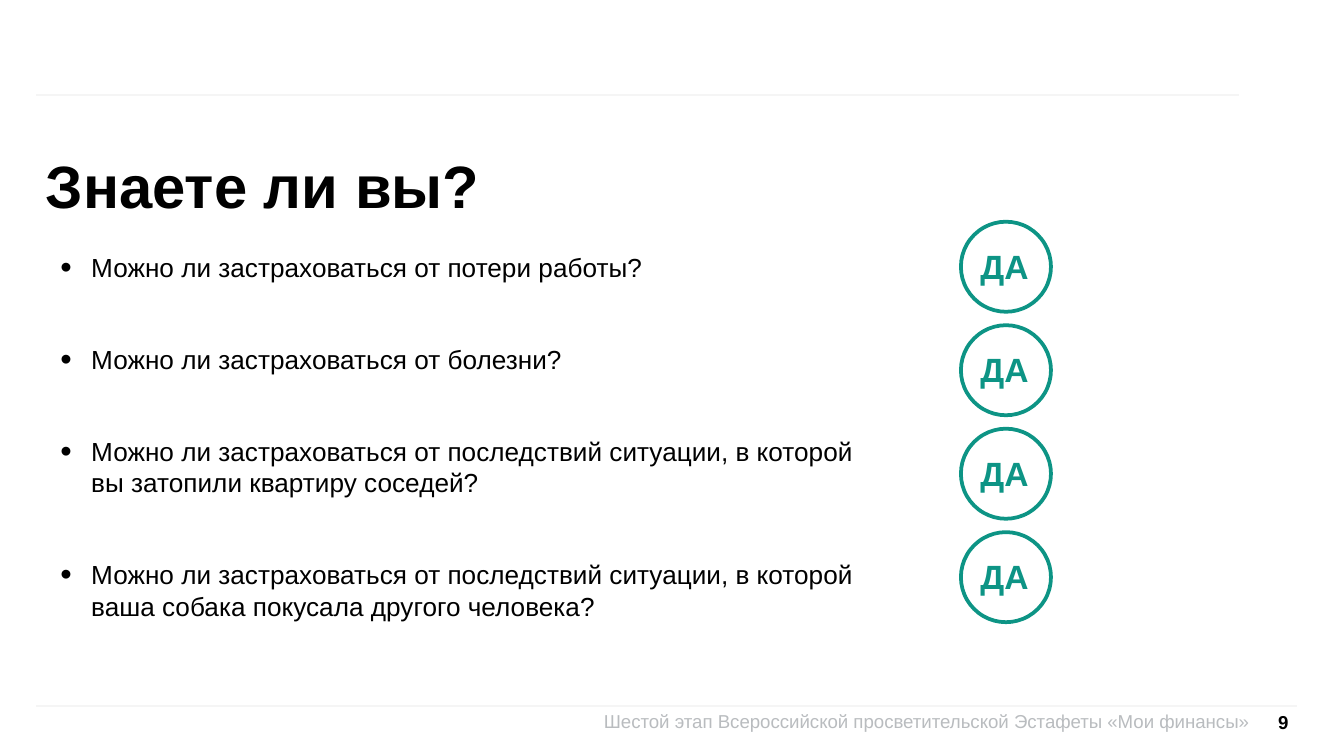
from lxml import etree
from pptx import Presentation
from pptx.dml.color import RGBColor
from pptx.enum.shapes import MSO_CONNECTOR, MSO_SHAPE
from pptx.enum.text import MSO_ANCHOR as ANCHOR, PP_ALIGN as ALIGN
from pptx.oxml.ns import qn
from pptx.util import Inches, Pt

BLACK = RGBColor(0x00, 0x00, 0x00)
GREY = RGBColor(0xB9, 0xBC, 0xBF)
PALE = RGBColor(0xF5, 0xF5, 0xF5)
TEAL = RGBColor(0x0D, 0x94, 0x85)

QUESTIONS = [
    "Можно ли застраховаться от потери работы?",
    "Можно ли застраховаться от болезни?",
    "Можно ли застраховаться от последствий ситуации, в которой вы затопили квартиру соседей?",
    "Можно ли застраховаться от последствий ситуации, в которой ваша собака покусала другого человека?",
]


def write(sp, *lines, size, color=BLACK, bold=False, align=ALIGN.LEFT,
          anchor=ANCHOR.TOP, inset=(0, 0), wrap=True, bullet=False, gap=0):
    """Fill a shape with one paragraph per line; inset is (sides, top and bottom) in inches."""
    tf = sp.text_frame
    tf.word_wrap = wrap
    tf.vertical_anchor = anchor
    tf.margin_left = tf.margin_right = Inches(inset[0])
    tf.margin_top = tf.margin_bottom = Inches(inset[1])
    for i, line in enumerate(lines):
        p = tf.paragraphs[0] if i == 0 else tf.add_paragraph()
        p.alignment = align
        if i:
            p.space_before = Pt(gap)
        if bullet:
            pPr = p._p.get_or_add_pPr()
            pPr.set("marL", str(Inches(0.23)))
            pPr.set("indent", str(-Inches(0.23)))
            etree.SubElement(pPr, qn("a:buSzPct"), val="125000")
            etree.SubElement(pPr, qn("a:buFont"), typeface="Arial")
            etree.SubElement(pPr, qn("a:buChar"), char="•")
        r = p.add_run()
        r.text = line
        r.font.name = "Arial"
        r.font.size = Pt(size)
        r.font.bold = bold
        r.font.color.rgb = color


prs = Presentation()
prs.slide_width = Inches(10)
prs.slide_height = Inches(10 * 9 / 16)
s = prs.slides.add_slide(prs.slide_layouts[6])

# Header and footer rules
for right, y in [(9.22, 0.71), (9.65, 5.25)]:
    rule = s.shapes.add_connector(MSO_CONNECTOR.STRAIGHT, Inches(0.27), Inches(y),
                                  Inches(right), Inches(y))
    rule.line.color.rgb = PALE
    rule.line.width = Pt(1)
    etree.SubElement(rule._element.spPr, qn("a:effectLst"))

footer = s.shapes.add_textbox(Inches(3.58), Inches(5.28), Inches(5.71), Inches(0.35))
write(footer, "Шестой этап Всероссийской просветительской Эстафеты «Мои финансы»",
      size=10, color=GREY, align=ALIGN.RIGHT)

title = s.shapes.add_textbox(Inches(0.34), Inches(1.11), Inches(3.29), Inches(0.51))
write(title, "Знаете ли вы?", size=32, bold=True)

number = s.shapes.add_textbox(Inches(9.45), Inches(5.23), Inches(0.19), Inches(0.28))
write(number, "9", size=10, bold=True, align=ALIGN.RIGHT, anchor=ANCHOR.MIDDLE,
      inset=(0.06, 0.06), wrap=False)

questions = s.shapes.add_textbox(Inches(0.35), Inches(1.82), Inches(6.35), Inches(3.32))
write(questions, *QUESTIONS, size=14, inset=(0.1, 0.05), bullet=True, gap=32.5)

# One circled answer per question
for i in range(len(QUESTIONS)):
    top = 1.65 + 0.77 * i
    answer = s.shapes.add_group_shape()
    circle = answer.shapes.add_shape(MSO_SHAPE.OVAL, Inches(7.15), Inches(top),
                                     Inches(0.67), Inches(0.67))
    circle.shadow.inherit = False
    circle.fill.background()
    circle.line.color.rgb = TEAL
    circle.line.width = Pt(2)
    label = answer.shapes.add_textbox(Inches(7.01), Inches(top + 0.13), Inches(0.93), Inches(0.4))
    write(label, "ДА", size=18, color=TEAL, bold=True, align=ALIGN.CENTER, inset=(0.1, 0.05))

prs.save("out.pptx")
